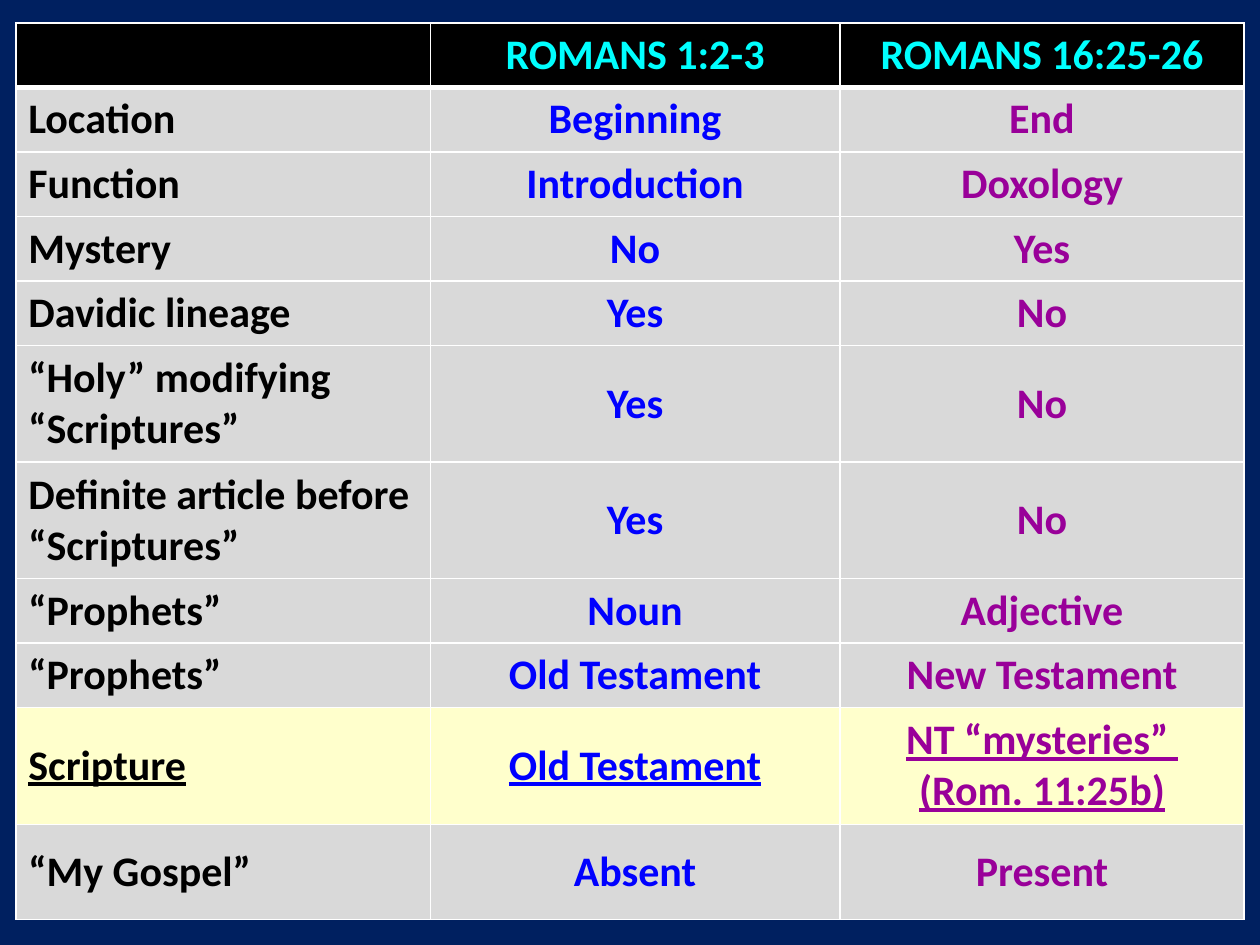
from lxml import etree
from pptx import Presentation
from pptx.dml import color
from pptx.enum import text
from pptx.oxml import ns
from pptx.util import Pt

SHORT, TALL, LAST = 36.9, 66.6, 54.5
COLUMN_WIDTHS = [236.9, 234, 231.1]
COLUMN_COLORS = ["000000", "0000FF", "990099"]
ROWS = [
    (SHORT, "", "ROMANS 1:2-3", "ROMANS 16:25-26"),
    (SHORT, "Location", "Beginning", "End"),
    (SHORT, "Function", "Introduction", "Doxology"),
    (SHORT, "Mystery", "No", "Yes"),
    (SHORT, "Davidic lineage", "Yes", "No"),
    (TALL, "“Holy” modifying “Scriptures”", "Yes", "No"),
    (TALL, "Definite article before “Scriptures”", "Yes", "No"),
    (SHORT, "“Prophets”", "Noun", "Adjective"),
    (SHORT, "“Prophets”", "Old Testament", "New Testament"),
    (TALL, "Scripture", "Old Testament", "NT “mysteries” \n(Rom. 11:25b)"),
    (LAST, "“My Gospel”", "Absent", "Present"),
]
HIGHLIGHT_ROW = 9


def rgb(value):
    return color.RGBColor.from_string(value)


def set_borders(cell, top, bottom):
    properties = cell._tc.get_or_add_tcPr()
    for side, width in (("L", 1), ("R", 1), ("T", top), ("B", bottom)):
        line = etree.SubElement(properties, ns.qn(f"a:ln{side}"), w=str(Pt(width)))
        fill = etree.SubElement(line, ns.qn("a:solidFill"))
        etree.SubElement(fill, ns.qn("a:srgbClr"), val="FFFFFF")


def style_cell(cell, words, row, column):
    header = row == 0
    highlighted = row == HIGHLIGHT_ROW
    set_borders(cell, 3 if row == 1 else 1, 3 if header else 1)
    cell.fill.solid()
    cell.fill.fore_color.rgb = rgb(
        "000000" if header else "FFFFCC" if highlighted else "D9D9D9")
    cell.vertical_anchor = text.MSO_ANCHOR.TOP if header else text.MSO_ANCHOR.MIDDLE
    cell.text_frame.text = words
    for paragraph in cell.text_frame.paragraphs:
        paragraph.alignment = text.PP_ALIGN.CENTER if column else text.PP_ALIGN.LEFT
        for run in paragraph.runs:
            run.font.name = "Calibri"
            run.font.size = Pt(24)
            run.font.bold = True
            run.font.underline = highlighted
            run.font.color.rgb = rgb("00FFFF" if header else COLUMN_COLORS[column])


def add_comparison_table(slide, left, top):
    width = sum(COLUMN_WIDTHS)
    height = sum(row[0] for row in ROWS)
    table = slide.shapes.add_table(
        len(ROWS), len(COLUMN_WIDTHS), Pt(left), Pt(top), Pt(width), Pt(height)).table
    for column, column_width in enumerate(COLUMN_WIDTHS):
        table.columns[column].width = Pt(column_width)
    for row, (row_height, *entries) in enumerate(ROWS):
        table.rows[row].height = Pt(row_height)
        for column, words in enumerate(entries):
            style_cell(table.cell(row, column), words, row, column)


def main():
    presentation = Presentation()
    presentation.slide_width = Pt(720)
    presentation.slide_height = Pt(540)
    slide = presentation.slides.add_slide(presentation.slide_layouts[6])
    slide.background.fill.solid()
    slide.background.fill.fore_color.rgb = rgb("002060")
    add_comparison_table(slide, 9, 13.1)
    presentation.save("out.pptx")


if __name__ == "__main__":
    main()
